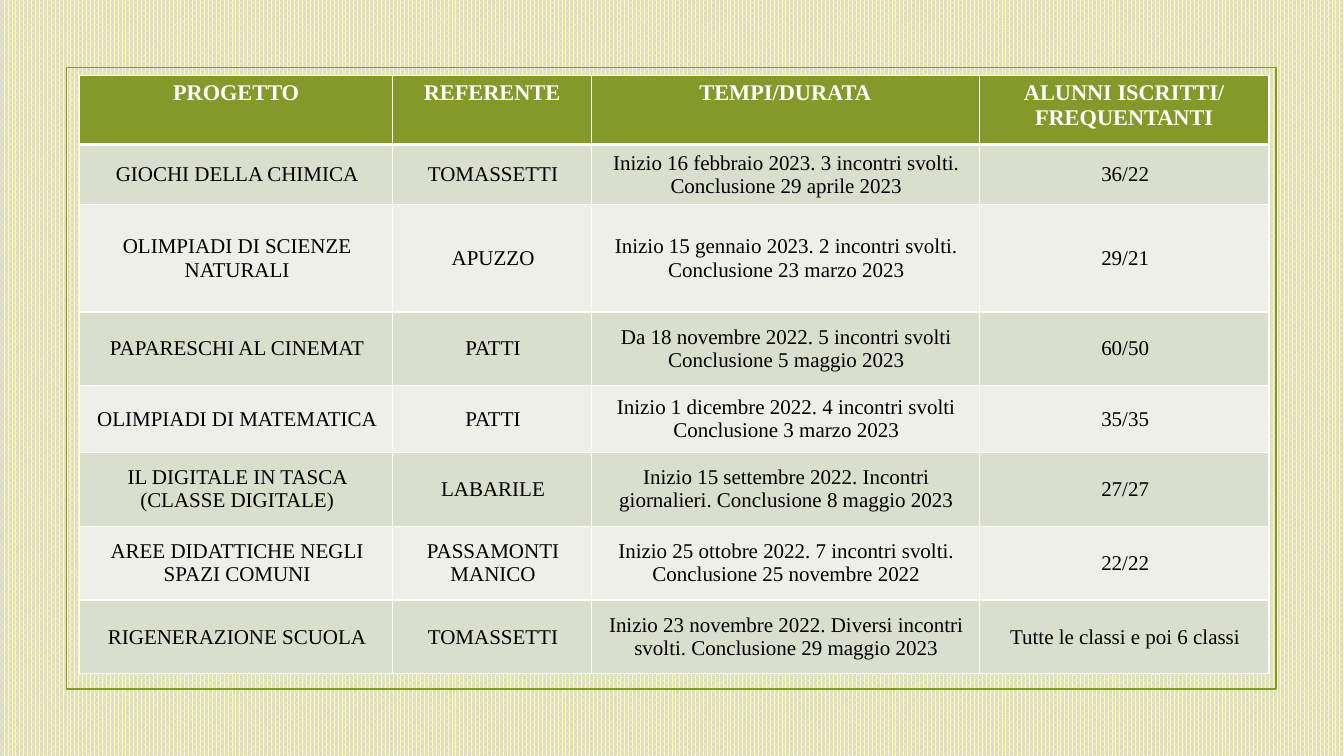
from lxml import etree
from pptx import Presentation
from pptx import util as u
from pptx.dml.color import RGBColor
from pptx.enum import dml, shapes, text
from pptx.oxml.ns import qn

COLORS = {
    "yellow": "FFFF99", "grey": "D9D9D9", "olive": "83992A", "white": "FFFFFF",
    "black": "000000", "band": "D9DECD", "light": "EDEFE8",
}
FONT = "Times New Roman"


def rgb(name):
    return RGBColor.from_string(COLORS[name])


def add_border(cell, side, width):
    line = etree.SubElement(cell._tc.get_or_add_tcPr(), qn(f"a:ln{side}"), w=str(u.Pt(width)))
    fill = etree.SubElement(line, qn("a:solidFill"))
    etree.SubElement(fill, qn("a:srgbClr"), val=COLORS["white"])


prs = Presentation()
prs.slide_width, prs.slide_height = u.Cm(33.87), u.Cm(19.05)
slide = prs.slides.add_slide(prs.slide_layouts[6])

# Patterned background
backdrop = slide.background.fill
backdrop.patterned()
backdrop.pattern = dml.MSO_PATTERN.PERCENT_75
backdrop.fore_color.rgb = rgb("yellow")
backdrop.back_color.rgb = rgb("grey")

# Olive frame
frame = slide.shapes.add_shape(
    shapes.MSO_SHAPE.RECTANGLE, u.Cm(1.68), u.Cm(1.7), u.Cm(30.48), u.Cm(15.67))
frame.shadow.inherit = False
frame.fill.background()
frame.line.color.rgb = rgb("olive")
frame.line.width = u.Pt(1.25)

# Project table
projects = [
    ("PROGETTO", "REFERENTE", "TEMPI/DURATA", "ALUNNI ISCRITTI/\nFREQUENTANTI"),
    ("GIOCHI DELLA CHIMICA", "TOMASSETTI",
     "Inizio 16 febbraio 2023. 3 incontri svolti. Conclusione 29 aprile 2023", "36/22"),
    ("OLIMPIADI DI SCIENZE NATURALI", "APUZZO",
     "Inizio 15 gennaio 2023. 2 incontri svolti. Conclusione 23 marzo 2023", "29/21"),
    ("PAPARESCHI AL CINEMAT", "PATTI",
     "Da 18 novembre 2022. 5 incontri svolti\nConclusione 5 maggio 2023", "60/50"),
    ("OLIMPIADI DI MATEMATICA", "PATTI",
     "Inizio 1 dicembre 2022. 4 incontri svolti Conclusione 3 marzo 2023", "35/35"),
    ("IL DIGITALE IN TASCA (CLASSE DIGITALE)", "LABARILE",
     "Inizio 15 settembre 2022. Incontri giornalieri. Conclusione 8 maggio 2023", "27/27"),
    ("AREE DIDATTICHE NEGLI SPAZI COMUNI", "PASSAMONTI MANICO",
     "Inizio 25 ottobre 2022. 7 incontri svolti. Conclusione 25 novembre 2022", "22/22"),
    ("RIGENERAZIONE SCUOLA", "TOMASSETTI",
     "Inizio 23 novembre 2022. Diversi incontri svolti. Conclusione 29 maggio 2023",
     "Tutte le classi e poi 6 classi"),
]
column_widths = [7.9, 5, 9.78, 7.3]
row_heights = [1.73, 1.52, 2.7, 1.86, 1.68, 1.86, 1.86, 1.86]
register = slide.shapes.add_table(
    len(projects), len(column_widths), u.Cm(2), u.Cm(1.91),
    u.Cm(sum(column_widths)), u.Cm(sum(row_heights))).table
for column, width in zip(register.columns, column_widths):
    column.width = u.Cm(width)
for row, height in zip(register.rows, row_heights):
    row.height = u.Cm(height)

# Formats of the heading row and of the project rows
heading_font = {"name": FONT, "size": u.Pt(16), "bold": True}
project_font = {"name": FONT, "size": u.Pt(15), "bold": False}
project_cell = {
    "vertical_anchor": text.MSO_ANCHOR.MIDDLE,
    "margin_left": u.Cm(0.1), "margin_right": u.Cm(0.05),
    "margin_top": u.Cm(0.03), "margin_bottom": u.Cm(0.03),
}

for r, project in enumerate(projects):
    heading = r == 0
    row_fill = "olive" if heading else ("light", "band")[r % 2]
    for c, wording in enumerate(project):
        cell = register.cell(r, c)
        cell.text = wording
        for key, value in ({} if heading else project_cell).items():
            setattr(cell, key, value)
        for side in "LRTB":
            under_heading = (r, side) in ((0, "B"), (1, "T"))
            add_border(cell, side, 3 if under_heading else 1)
        cell.fill.solid()
        cell.fill.fore_color.rgb = rgb(row_fill)
        for paragraph in cell.text_frame.paragraphs:
            paragraph.alignment = text.PP_ALIGN.CENTER
            font = paragraph.runs[0].font
            for key, value in (heading_font if heading else project_font).items():
                setattr(font, key, value)
            font.color.rgb = rgb("white" if heading else "black")

prs.save("out.pptx")
